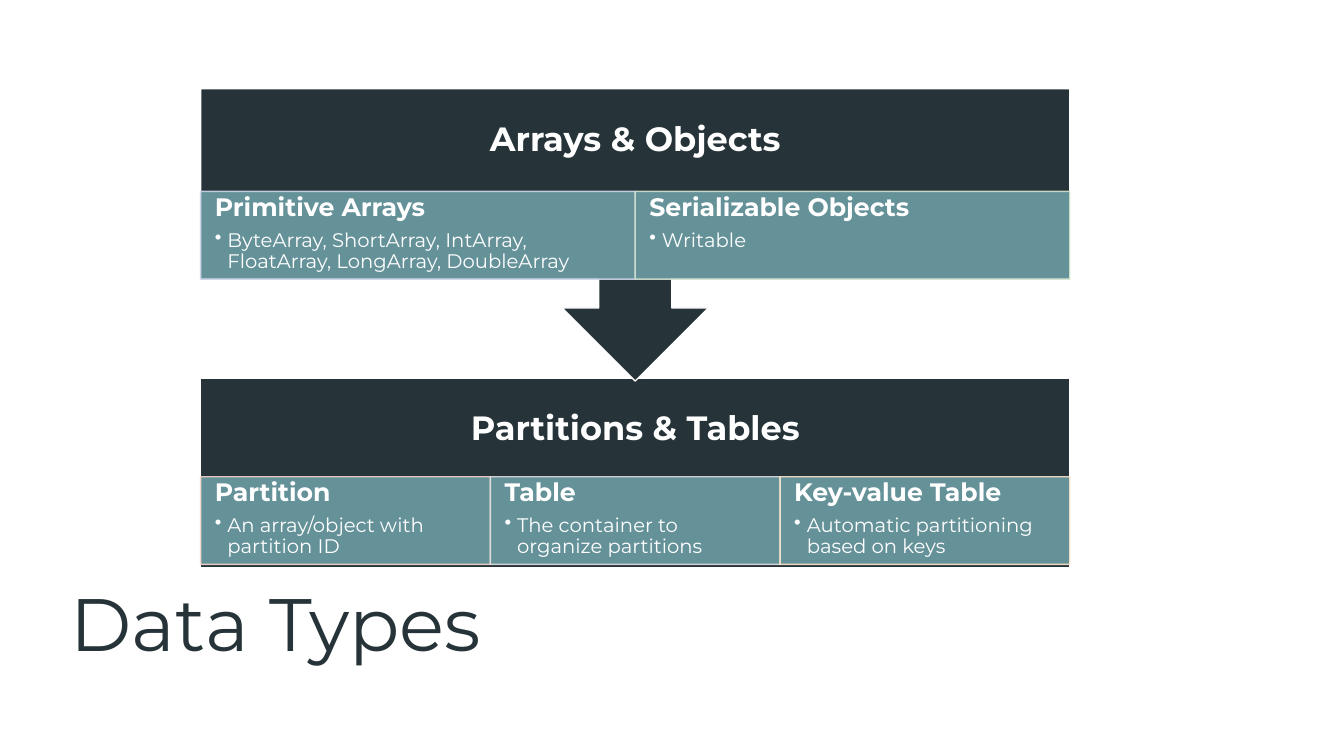
from dataclasses import dataclass

from lxml.etree import SubElement
from pptx import Presentation
from pptx.dml.color import RGBColor
from pptx.enum.shapes import MSO_SHAPE as Preset
from pptx.enum.text import MSO_ANCHOR as Anchor, MSO_AUTO_SIZE as AutoSize, PP_ALIGN as Align
from pptx.oxml.ns import qn
from pptx.shapes.autoshape import Shape
from pptx.slide import Slide
from pptx.text.text import TextFrame
from pptx.util import Inches, Length, Pt

DARK = RGBColor(0x26, 0x33, 0x38)
TEAL = RGBColor(0x6C, 0x9D, 0xA4)
WHITE = RGBColor(0xFF, 0xFF, 0xFF)
BLUE_EDGE = RGBColor(0xCF, 0xD5, 0xEA)
GREEN_EDGE = RGBColor(0xD5, 0xE3, 0xCF)
PINK_EDGE = RGBColor(0xF8, 0xD7, 0xCE)
GREY_EDGE = RGBColor(0xE1, 0xE1, 0xE1)
CREAM_EDGE = RGBColor(0xFF, 0xE8, 0xCC)

FONT = "Montserrat"
PAGE_WIDTH, PAGE_HEIGHT = Inches(13.33), Inches(7.5)
LEFT, WIDTH = 14.93, 64.67
HEADER_HEIGHT, CELL_HEIGHT = 13.6, 11.6


@dataclass(frozen=True)
class Cell:
    heading: str
    detail: str
    edge: RGBColor


@dataclass(frozen=True)
class Block:
    title: str
    preset: Preset
    rotation: int
    top: float
    height: float
    cells_top: float
    cells: tuple[Cell, ...]


BLOCKS = (
    Block("Partitions & Tables", Preset.RECTANGLE, 0, 50, 25.07, 63.07, (
        Cell("Partition", "An array/object with partition ID", PINK_EDGE),
        Cell("Table", "The container to organize partitions", GREY_EDGE),
        Cell("Key-value Table", "Automatic partitioning based on keys", CREAM_EDGE),
    )),
    Block("Arrays & Objects", Preset.UP_ARROW_CALLOUT, 180, 11.73, 38.67, 25.33, (
        Cell("Primitive Arrays",
             "ByteArray, ShortArray, IntArray, FloatArray, LongArray, DoubleArray", BLUE_EDGE),
        Cell("Serializable Objects", "Writable", GREEN_EDGE),
    )),
)


def columns(count: float) -> Length:
    return Length(round(PAGE_WIDTH * count / 100))


def rows(count: float) -> Length:
    return Length(round(PAGE_HEIGHT * count / 100))


def place(left: float, top: float, width: float, height: float) -> tuple[Length, ...]:
    return columns(left), rows(top), columns(width), rows(height)


def set_frame(frame: TextFrame, anchor: Anchor, side: float, end: float) -> None:
    frame.word_wrap = True
    frame.auto_size = AutoSize.NONE
    frame.vertical_anchor = anchor
    frame.margin_left = frame.margin_right = columns(side)
    frame.margin_top = frame.margin_bottom = rows(end)


def write(para, text: str, size: float, color: RGBColor, bold: bool,
          align: Align, after: float) -> None:
    para.alignment = align
    para.line_spacing = 0.9
    para.space_before = Pt(0)
    para.space_after = Pt(after)
    span = para.add_run()
    span.text = text
    span.font.name = FONT
    span.font.size = Pt(size)
    span.font.bold = bold
    span.font.color.rgb = color


def add_bullet(para) -> None:
    properties = para._p.get_or_add_pPr()
    indent = columns(0.94)
    properties.set("marL", str(indent))
    properties.set("indent", str(-indent))
    SubElement(properties, qn("a:buChar")).set("char", "•")


def add_panel(page: Slide, preset: Preset, area: tuple[Length, ...],
              fill: RGBColor, edge: RGBColor) -> Shape:
    panel = page.shapes.add_shape(preset, *area)
    panel.shadow.inherit = False
    panel.fill.solid()
    panel.fill.fore_color.rgb = fill
    panel.line.color.rgb = edge
    panel.line.width = Pt(1)
    return panel


def add_cell(page: Slide, cell: Cell, area: tuple[Length, ...]) -> None:
    box = add_panel(page, Preset.RECTANGLE, area, TEAL, cell.edge)
    for color in box._element.spPr.iter(qn("a:srgbClr")):
        SubElement(color, qn("a:alpha")).set("val", "90000")
    frame = box.text_frame
    set_frame(frame, Anchor.TOP, 1.05, 0.4)
    write(frame.paragraphs[0], cell.heading, 18, WHITE, True, Align.LEFT, 6.3)
    para = frame.add_paragraph()
    para.level = 1
    write(para, cell.detail, 14, WHITE, False, Align.LEFT, 2.1)
    add_bullet(para)


def add_block(page: Slide, block: Block) -> None:
    area = place(LEFT, block.top, WIDTH, block.height)
    panel = add_panel(page, block.preset, area, DARK, WHITE)
    panel.rotation = block.rotation
    header = page.shapes.add_textbox(*place(LEFT, block.top, WIDTH, HEADER_HEIGHT))
    set_frame(header.text_frame, Anchor.MIDDLE, 1.43, 2.53)
    write(header.text_frame.paragraphs[0], block.title, 24, WHITE, True, Align.CENTER, 0)
    cell_width = WIDTH / len(block.cells)
    for index, cell in enumerate(block.cells):
        left = LEFT + index * cell_width
        add_cell(page, cell, place(left, block.cells_top, cell_width, CELL_HEIGHT))


def add_title(page: Slide) -> None:
    title = page.shapes.title
    title.left, title.top, title.width, title.height = place(4.5, 77.73, 86.27, 19.33)
    set_frame(title.text_frame, Anchor.TOP, 0.75, 0)
    write(title.text_frame.paragraphs[0], "Data Types", 53, DARK, False, Align.LEFT, 0)


def main() -> None:
    deck = Presentation()
    deck.slide_width, deck.slide_height = PAGE_WIDTH, PAGE_HEIGHT
    page = deck.slides.add_slide(deck.slide_layouts[5])
    for block in BLOCKS:
        add_block(page, block)
    add_title(page)
    deck.save("out.pptx")


if __name__ == "__main__":
    main()
